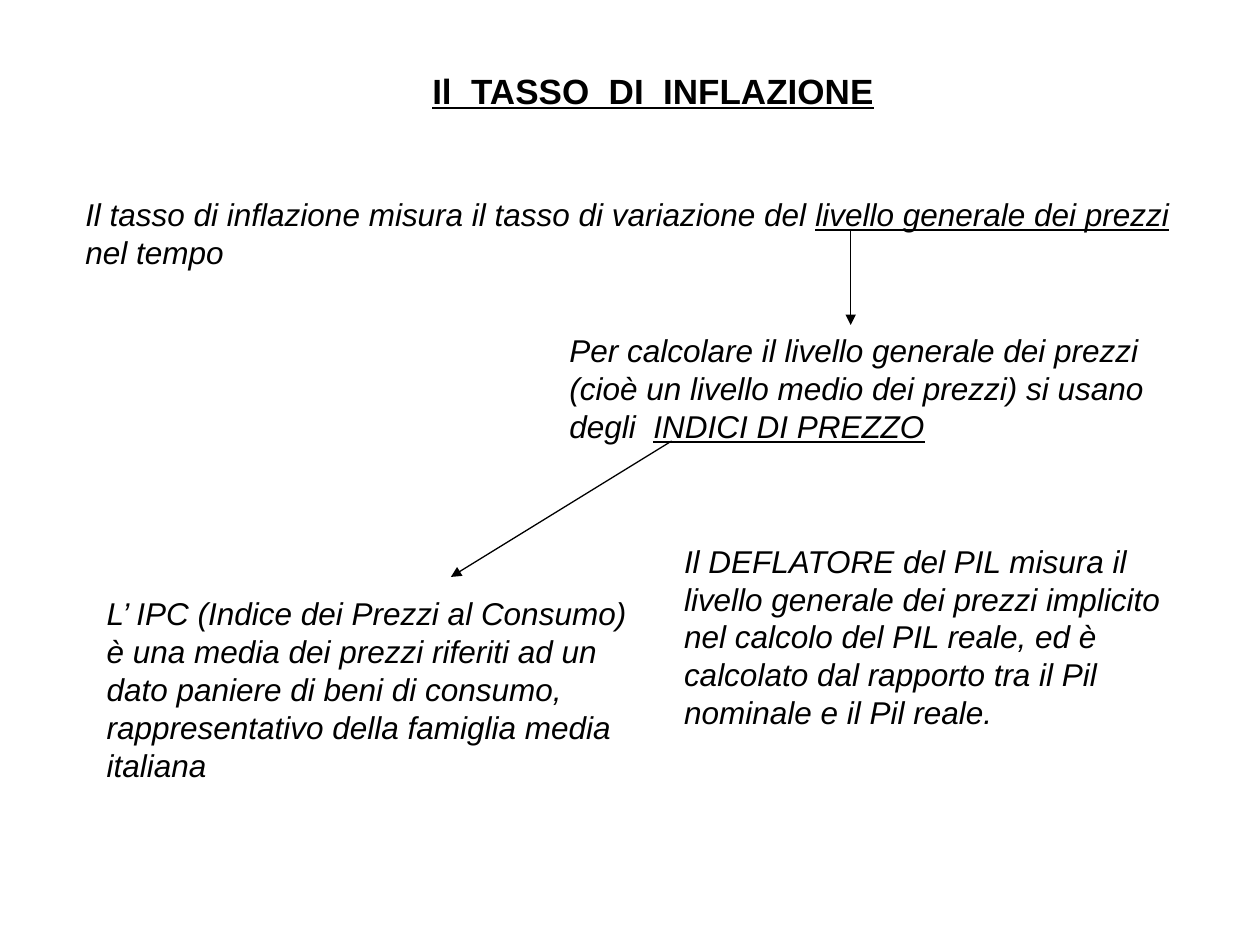
from pptx import Presentation
from pptx.dml.color import RGBColor as Rgb
from pptx.enum.shapes import MSO_CONNECTOR as Link
from pptx.enum.text import MSO_ANCHOR as Anchor, MSO_AUTO_SIZE as Auto, PP_ALIGN as Align
from pptx.oxml.ns import qn
from pptx.util import Cm, Pt
from lxml.etree import SubElement as Sub

HUES = {"ink": "000000", "paper": "FFFFFF"}
HEAD = {"size": Pt(20), "bold": True, "italic": False, "underline": True}
BODY = {"size": Pt(18), "bold": False, "italic": True}


class Deck:
    """Holds the style and the current slide."""

    font = "Arial"

    def __init__(self):
        self.prs = Presentation()
        self.prs.slide_width, self.prs.slide_height = Cm(25.4), Cm(19.05)
        self.slide = self.prs.slides.add_slide(self.prs.slide_layouts[5])
        back = self.slide.background.fill
        back.solid()
        back.fore_color.rgb = Rgb.from_string(HUES["paper"])

    def fill(self, shape, paras, look, wrap=True):
        """Write paragraphs, each a list of (text, underlined) runs."""
        frame = shape.text_frame
        form = {"word_wrap": wrap, "auto_size": Auto.SHAPE_TO_FIT_TEXT,
                "vertical_anchor": Anchor.TOP}
        for key, val in form.items():
            setattr(frame, key, val)
        for num, runs in enumerate(paras):
            para = frame.add_paragraph() if num else frame.paragraphs[0]
            para.alignment = Align.LEFT
            for text, under in runs:
                run = para.add_run()
                run.text = text
                run.font.color.rgb = Rgb.from_string(HUES["ink"])
                style = {"name": self.font, "underline": under, **look}
                for key, val in style.items():
                    setattr(run.font, key, val)

    def title(self, text, box):
        shape = self.slide.shapes.title
        for key, val in zip(("left", "top", "width", "height"), box):
            setattr(shape, key, Cm(val))
        self.fill(shape, [[(text, True)]], HEAD, wrap=False)

    def text(self, box, *paras):
        shape = self.slide.shapes.add_textbox(*map(Cm, box))
        self.fill(shape, paras, BODY)

    def arrow(self, start, end):
        link = self.slide.shapes.add_connector(
            Link.STRAIGHT, *map(Cm, start + end))
        link.line.width = Pt(0.75)
        link.line.color.rgb = Rgb.from_string(HUES["ink"])
        Sub(link.line._get_or_add_ln(), qn("a:tailEnd"), type="triangle")
        Sub(link._element.spPr, qn("a:effectLst"))


def main():
    deck = Deck()

    # Title and definition
    deck.title("Il  TASSO  DI  INFLAZIONE", (8.46, 1.27, 9.45, 1.09))
    deck.text((1.47, 3.81, 22.43, 1.78), [
        ("Il tasso di inflazione misura il tasso di variazione del ", False),
        ("livello generale dei prezzi", True),
        (" nel tempo", False)])

    # Price indices
    deck.arrow((17.15, 4.65), (17.15, 6.55))
    deck.text((11.23, 6.55, 12.9, 2.54), [
        ("Per calcolare il livello generale dei prezzi (cioè un livello "
         "medio dei prezzi) si usano degli  ", False),
        ("INDICI DI PREZZO", True)])

    # The two measures
    deck.arrow((13.54, 8.89), (9.09, 11.63))
    deck.text(
        (1.9, 11.86, 11.05, 4.06),
        [("L’ IPC (Indice dei Prezzi al Consumo)", False)],
        [("è una media dei prezzi riferiti ad un dato paniere di beni di "
          "consumo, rappresentativo della famiglia media italiana", False)])
    deck.text((13.54, 10.8, 11.05, 4.06), [
        ("Il DEFLATORE del PIL misura il livello generale dei prezzi "
         "implicito nel calcolo del PIL reale, ed è calcolato dal rapporto "
         "tra il Pil nominale e il Pil reale.", False)])

    deck.prs.save("out.pptx")


if __name__ == "__main__":
    main()
